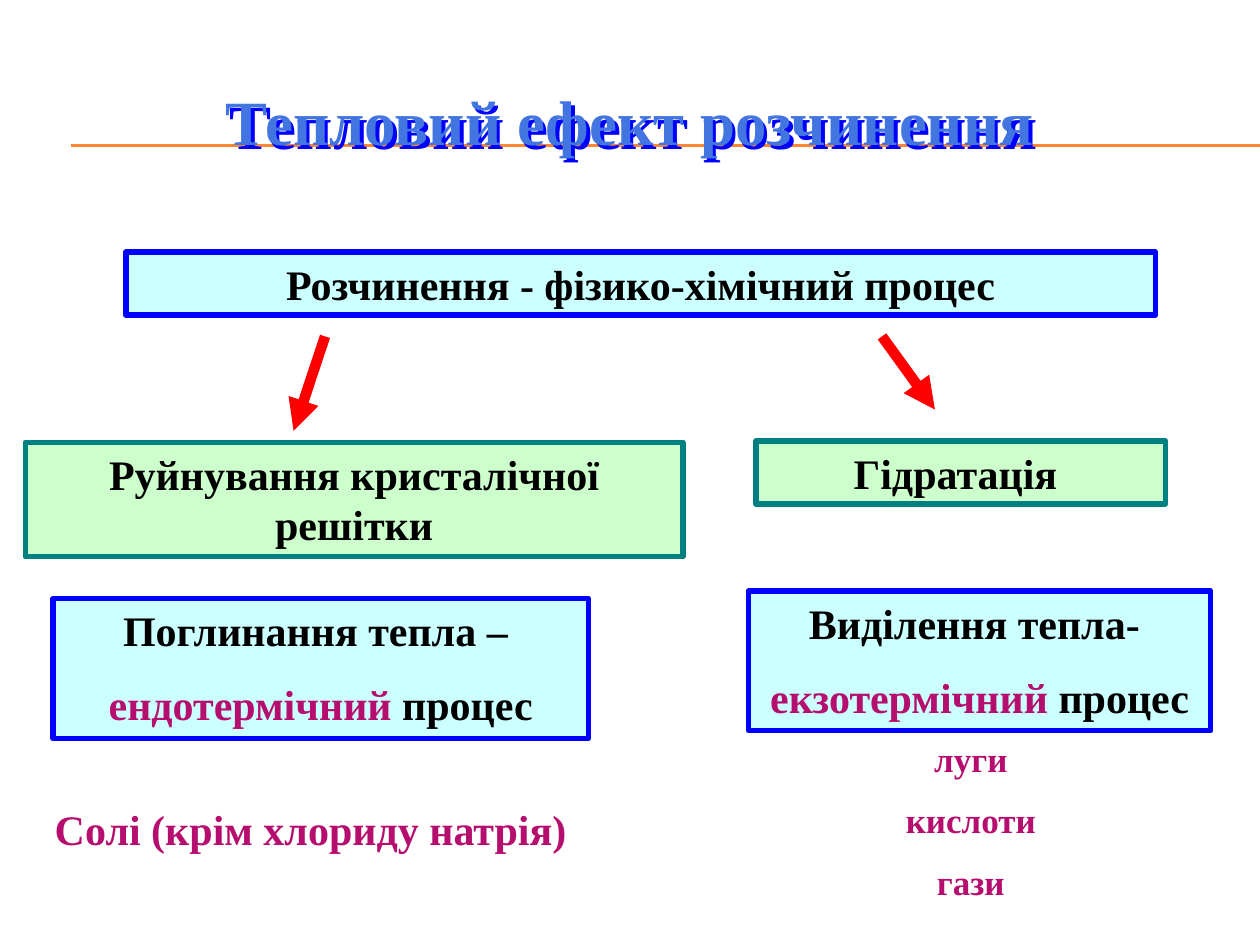
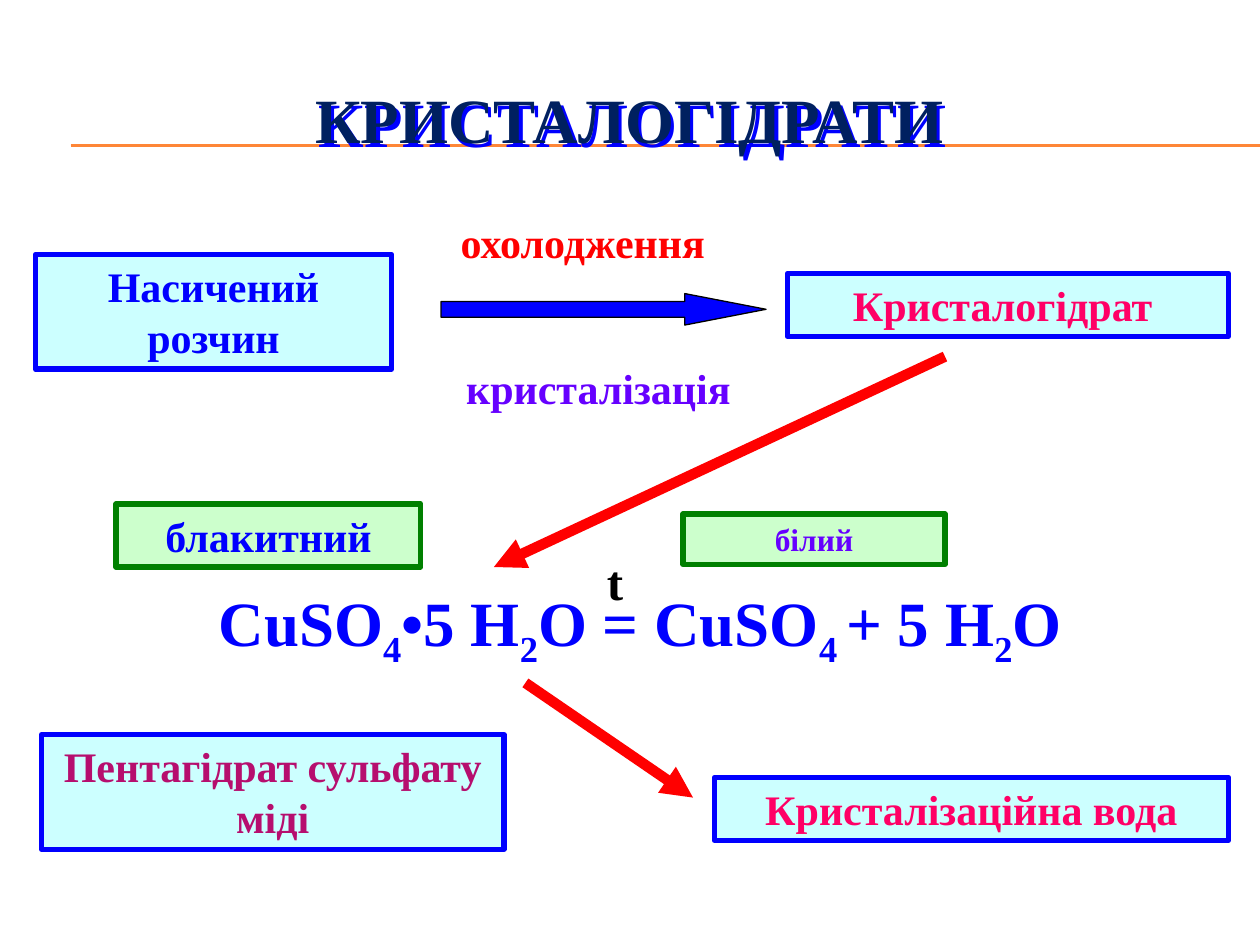
from dataclasses import dataclass

import lxml.etree
import pptx
import pptx.dml.color
import pptx.enum.shapes
import pptx.enum.text
import pptx.oxml.ns
import pptx.util

Inches = pptx.util.Inches
SHAPES = pptx.enum.shapes.MSO_SHAPE


@dataclass(frozen=True)
class Theme:
    font: str = "Times New Roman"
    title_size: int = 36
    symbol_size: int = 28
    body_size: int = 24
    example_size: int = 20
    note_size: int = 18
    black: str = "000000"
    blue: str = "0000FF"
    title_blue: str = "4275DF"
    navy: str = "002060"
    red: str = "FF0000"
    pink: str = "FF0066"
    plum: str = "B60E6E"
    violet: str = "6600FF"
    pale_blue: str = "CCFFFF"
    pale_green: str = "CCFFCC"
    teal: str = "008080"
    green: str = "008000"
    orange: str = "FE8637"


THEME = Theme()
BLUE_PANEL = {"fill": THEME.pale_blue, "border": THEME.blue}
TEAL_PANEL = {"fill": THEME.pale_green, "border": THEME.teal}
GREEN_PANEL = {"fill": THEME.pale_green, "border": THEME.green}


def rgb(value):
    return pptx.dml.color.RGBColor.from_string(value)


def add_xml(parent, tag, **attributes):
    child = lxml.etree.SubElement(parent, pptx.oxml.ns.qn(tag))
    for name, value in attributes.items():
        child.set(name, str(value))
    return child


def within(area, left, top, width, height):
    """Turn a box measured from the corner of area into a slide box."""
    return area[0] + left, area[1] + top, width, height


def write(holder, paragraphs, size=THEME.body_size, color=THEME.black,
          anchor=pptx.enum.text.MSO_ANCHOR.TOP):
    """Fill holder with paragraphs: strings, or lists of (text, run format)."""
    frame = holder.text_frame
    frame.word_wrap = True
    frame.vertical_anchor = anchor
    for index, runs in enumerate(paragraphs):
        paragraph = frame.add_paragraph() if index else frame.paragraphs[0]
        paragraph.alignment = pptx.enum.text.PP_ALIGN.CENTER
        if index:
            paragraph.space_before = pptx.util.Pt(round(size * 0.56, 1))
        for text, style in [(runs, {})] if isinstance(runs, str) else runs:
            run = paragraph.add_run()
            run.text = text
            run.font.name = THEME.font
            run.font.bold = True
            run.font.size = pptx.util.Pt(style.get("size", size))
            run.font.color.rgb = rgb(style.get("color", color))
            if style.get("subscript"):
                run.font._element.set("baseline", "-25000")


def label(slide, box, *paragraphs, **style):
    holder = slide.shapes.add_textbox(*map(Inches, box))
    write(holder, paragraphs, **style)
    return holder


def filled_shape(slide, kind, box, fill, border, weight):
    shape = slide.shapes.add_shape(kind, *map(Inches, box))
    shape.shadow.inherit = False
    shape.fill.solid()
    shape.fill.fore_color.rgb = rgb(fill)
    shape.line.color.rgb = rgb(border)
    shape.line.width = pptx.util.Pt(weight)
    return shape


def panel(slide, box, *paragraphs, fill, border, **style):
    frame = filled_shape(slide, SHAPES.RECTANGLE, box, fill, border, 3)
    write(frame, paragraphs, **style)


def line(slide, start, end, color, weight):
    connector = slide.shapes.add_connector(
        pptx.enum.shapes.MSO_CONNECTOR.STRAIGHT, *map(Inches, start + end))
    connector.line.color.rgb = rgb(color)
    connector.line.width = pptx.util.Pt(weight)
    add_xml(connector._element.spPr, "a:effectLst")
    return connector


def red_arrow(slide, area, start, end):
    start, end = ((area[0] + x, area[1] + y) for x, y in (start, end))
    arrow = line(slide, start, end, THEME.red, 6)
    add_xml(arrow.line._get_or_add_ln(), "a:tailEnd", type="triangle")


def titled_slide(deck, box, title, color):
    """Add a slide with the double rule and a title that casts a blue shadow."""
    slide = deck.slides.add_slide(deck.slide_layouts[6])
    for height in (1.15, 1.16):
        line(slide, (0.56, height), (10, height), THEME.orange, 0.75)
    heading = label(slide, box, title, size=THEME.title_size, color=color,
                    anchor=pptx.enum.text.MSO_ANCHOR.MIDDLE)
    effects = add_xml(heading._element.spPr, "a:effectLst")
    shadow = add_xml(effects, "a:outerShdw", dist=Inches(0.04), dir=2700000,
                     algn="ctr", rotWithShape=0)
    add_xml(shadow, "a:srgbClr", val=THEME.blue)
    return slide


def heat_text(change, kind):
    return change, [(kind, {"color": THEME.plum}), ("процес", {})]


def lattice_branch(slide, area):
    red_arrow(slide, area, (2.38, 0), (2.13, 0.75))
    panel(slide, within(area, 0, 0.84, 5.22, 0.91),
          "Руйнування кристалічної решітки", **TEAL_PANEL)
    panel(slide, within(area, 0.22, 2.08, 4.25, 1.11),
          *heat_text("Поглинання тепла – ", "ендотермічний "), **BLUE_PANEL)
    label(slide, within(area, 0.13, 3.66, 4.27, 0.5),
          "Солі (крім хлориду натрія)", color=THEME.plum)


def hydration_branch(slide, area):
    red_arrow(slide, area, (1.06, 0), (1.48, 0.58))
    panel(slide, within(area, 0.06, 0.83, 3.25, 0.5), "Гідратація ", **TEAL_PANEL)
    panel(slide, within(area, 0, 2.02, 3.67, 1.11),
          *heat_text("Виділення тепла- ", "екзотермічний "), **BLUE_PANEL)
    label(slide, within(area, 0.14, 3.13, 3.25, 1.45), "луги", "кислоти", "гази",
          size=THEME.example_size, color=THEME.plum)


def heat_effect_slide(deck):
    slide = titled_slide(deck, (0.25, 0.33, 9.5, 1.25),
                         "Тепловий ефект розчинення", THEME.title_blue)
    panel(slide, (1, 2, 8.17, 0.5), "Розчинення - фізико-хімічний процес",
          **BLUE_PANEL)
    lattice_branch(slide, (0.2, 2.67, 5.22, 4.16))
    hydration_branch(slide, (5.94, 2.67, 3.67, 4.58))


def crystallisation(slide, area):
    panel(slide, within(area, 0, 0.35, 2.83, 0.91), "Насичений розчин",
          color=THEME.blue, **BLUE_PANEL)
    panel(slide, within(area, 5.97, 0.5, 3.5, 0.5), "Кристалогідрат ",
          color=THEME.pink, **BLUE_PANEL)
    cooling = filled_shape(slide, SHAPES.RIGHT_ARROW,
                           within(area, 3.22, 0.66, 2.58, 0.25),
                           THEME.blue, THEME.black, 0.75)
    cooling.adjustments[1] = 2.58
    label(slide, within(area, 2.97, 0, 2.75, 0.5), "охолодження", color=THEME.red)
    label(slide, within(area, 2.72, 1.16, 3.5, 0.5), "кристалізація",
          color=THEME.violet)


def decomposition(slide, area):
    """Place the equation with its colour notes, substance names and arrows."""
    sub = {"subscript": True}
    equation = [("CuSO", {}), ("4", sub), ("•5 H", {}), ("2", sub),
                ("O = CuSO", {}), ("4 ", sub), ("+ 5 H", {}), ("2", sub), ("O", {})]
    label(slide, within(area, 0.29, 1.75, 8.92, 0.71), equation,
          size=THEME.title_size, color=THEME.blue)
    panel(slide, within(area, 5.34, 3.34, 4.08, 0.5), "Кристалізаційна вода",
          color=THEME.pink, **BLUE_PANEL)
    panel(slide, within(area, 0, 3, 3.67, 0.91), "Пентагідрат сульфату міді",
          color=THEME.plum, **BLUE_PANEL)
    panel(slide, within(area, 0.59, 1.17, 2.42, 0.5), "блакитний",
          color=THEME.blue, **GREEN_PANEL)
    panel(slide, within(area, 5.09, 1.25, 2.08, 0.4), "білий",
          size=THEME.note_size, color=THEME.violet, **GREEN_PANEL)
    red_arrow(slide, area, (7.17, 0), (3.59, 1.67))
    label(slide, within(area, 4.34, 1.5, 0.42, 0.57), "t", size=THEME.symbol_size)
    red_arrow(slide, area, (3.84, 2.59), (5.17, 3.5))


def crystal_hydrates_slide(deck):
    title = [("КРИСТАЛОГІДРАТИ", {}), (" ", {"size": 48})]
    slide = titled_slide(deck, (0.83, 0.25, 8.5, 1.25), title, THEME.navy)
    crystallisation(slide, (0.28, 1.67, 9.47, 1.66))
    decomposition(slide, (0.33, 2.83, 9.42, 3.91))


def main():
    deck = pptx.Presentation()
    deck.slide_width, deck.slide_height = Inches(10), Inches(7.5)
    heat_effect_slide(deck)
    crystal_hydrates_slide(deck)
    deck.save("out.pptx")


if __name__ == "__main__":
    main()
